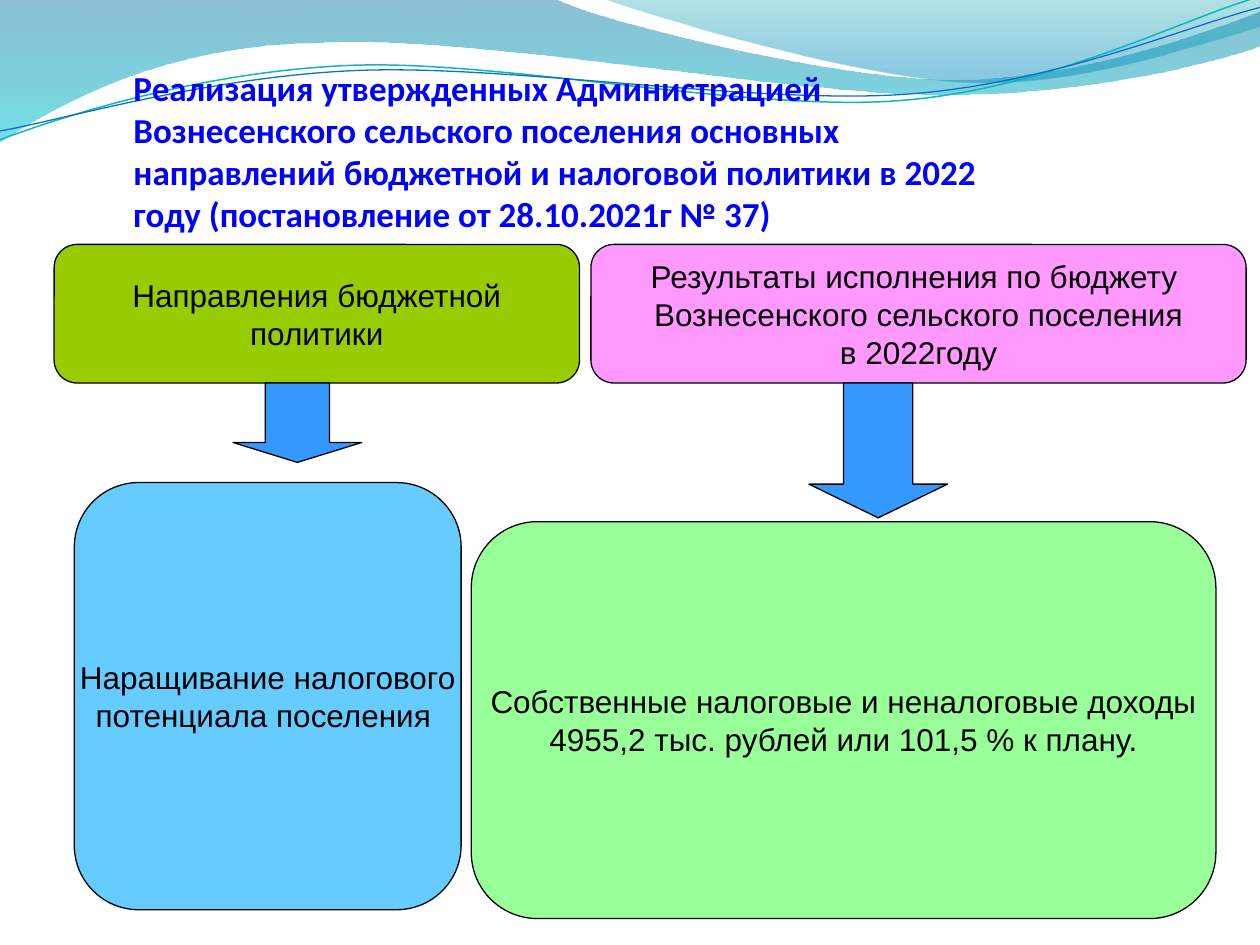
from dataclasses import dataclass
from math import cos, radians, sin

from lxml.etree import SubElement
from pptx import Presentation
from pptx.dml.color import RGBColor
from pptx.enum.shapes import MSO_SHAPE
from pptx.enum.text import MSO_ANCHOR, PP_ALIGN
from pptx.oxml.ns import qn
from pptx.util import Inches, Pt

COLUMNS, ROWS = 10, 7.5
LINE_TILT = -2.7


@dataclass
class Box:
    """A rectangle in grid columns and rows."""

    left: float
    top: float
    width: float
    height: float

    def inner(self, left, top, width, height):
        """Return a box offset from this one's top left corner."""
        return Box(self.left + left, self.top + top, width, height)

    def lengths(self):
        """Return left, top, width and height as slide lengths."""
        return [Inches(value) for value in (self.left, self.top, self.width, self.height)]


def color(hex_string):
    """Turn a hex string into a colour."""
    return RGBColor.from_string(hex_string)


def level_points(points, box, tilt):
    """Turn points back by the tilt around the centre of the box."""
    center_x, center_y = box.left + box.width / 2, box.top + box.height / 2
    cosine, sine = cos(radians(-tilt)), sin(radians(-tilt))
    offsets = [(x - center_x, y - center_y) for x, y in points]
    return [
        (center_x + x * cosine - y * sine, center_y + x * sine + y * cosine)
        for x, y in offsets
    ]


def add_curve(slide, box, numbers, close, tilt=0):
    """Draw a start point followed by straight (two) or cubic (six-number) segments."""
    points = [
        (box.left + segment[index], box.top + segment[index + 1])
        for segment in numbers for index in range(0, len(segment), 2)
    ]
    points = [(Inches(x), Inches(y)) for x, y in level_points(points, box, tilt)]
    builder = slide.shapes.build_freeform(*points[0])
    builder.add_line_segments(points[1:], close=close)
    shape = builder.convert_to_shape()
    shape.shadow.inherit = False
    shape.rotation = tilt
    steps = iter(list(shape.element.spPr.iter(qn("a:lnTo"))))
    for segment in numbers[1:]:
        first = next(steps)
        if len(segment) == 6:
            first.tag = qn("a:cubicBezTo")
            for step in (next(steps), next(steps)):
                first.append(step[0])
                step.getparent().remove(step)
    return shape


def add_wave(slide, box, numbers, stops):
    """Draw a closed wave with a translucent vertical gradient."""
    shape = add_curve(slide, box, numbers, True)
    shape.line.fill.background()
    shape.fill.gradient()
    shape.fill.gradient_angle = 270
    for stop, (position, hex_string, _) in zip(shape.fill.gradient_stops, stops):
        stop.position = position
        stop.color.rgb = color(hex_string)
    tints = shape.element.spPr.iter(qn("a:srgbClr"))
    for tint, (_, _, opacity) in zip(tints, stops):
        SubElement(tint, qn("a:alpha"), val=str(opacity * 1000))


def add_wave_line(slide, box, numbers, hex_string, width):
    """Draw an open, slightly tilted curved line."""
    shape = add_curve(slide, box, numbers, False, LINE_TILT)
    shape.fill.background()
    shape.line.color.rgb = color(hex_string)
    shape.line.width = Pt(width)


def add_header_waves(slide, box):
    """Draw the decorative waves along the top of the slide."""
    add_wave(slide, box, [
        (0, -0.01), (4.4, -0.01), (4.76, 0.17, 6.64, 0.63, 7.58, 0.63),
        (8.53, 0.63, 9.58, 0.26, 10, 0.09), (10.01, 0.36),
        (9.83, 0.44, 8.7, 0.76, 7.46, 0.75), (6.22, 0.75, 3.82, 0.28, 2.57, 0.34),
        (1.29, 0.35, 0.46, 0.83, -0.01, 1.13),
    ], [(0, "0074A1", 45), (1, "00C6CF", 55)])
    add_wave(slide, box, [
        (4.79, -0.01), (5.09, 0.11, 6.82, 0.62, 7.69, 0.65),
        (8.56, 0.69, 9.61, 0.32, 10, 0.21), (10, 0),
    ], [(0, "00A1A9", 30), (0.8, "008BBF", 45)])
    add_wave_line(slide, box, [
        (0, 1.11), (0.48, 0.93, 1.58, 0.57, 2.77, 0.52),
        (3.95, 0.47, 5.93, 0.89, 7.13, 0.8), (8.33, 0.71, 9.38, 0.15, 9.98, -0.02),
    ], "0AB8BF", 0.85)
    add_wave_line(slide, box, [
        (0, 1.04), (0.47, 0.96, 1.64, 0.61, 2.83, 0.56),
        (4.03, 0.51, 5.97, 0.83, 7.17, 0.75), (8.36, 0.67, 9.41, 0.21, 10, 0.06),
    ], "0F6FC6", 0.75)


def add_title(slide, box, text):
    """Write the bold blue title at the bottom of its box."""
    frame = slide.shapes.add_textbox(*box.lengths()).text_frame
    frame.word_wrap = True
    frame.vertical_anchor = MSO_ANCHOR.BOTTOM
    frame.margin_left = frame.margin_right = frame.margin_bottom = 0
    paragraph = frame.paragraphs[0]
    paragraph.text = text
    font = paragraph.font
    font.name, font.size, font.bold = "Calibri", Pt(20), True
    font.color.rgb = color("0000FF")


def add_outlined_shape(slide, box, kind, fill):
    """Add a filled preset shape with a thin black outline."""
    shape = slide.shapes.add_shape(kind, *box.lengths())
    shape.shadow.inherit = False
    shape.fill.solid()
    shape.fill.fore_color.rgb = color(fill)
    shape.line.color.rgb = color("000000")
    shape.line.width = Pt(0.75)
    return shape


def add_card(slide, box, fill, lines):
    """Add a rounded card with one centred paragraph per line."""
    shape = add_outlined_shape(slide, box, MSO_SHAPE.FLOWCHART_ALTERNATE_PROCESS, fill)
    frame = shape.text_frame
    frame.word_wrap = False
    frame.vertical_anchor = MSO_ANCHOR.MIDDLE
    frame.text = "\n".join(lines)
    for paragraph in frame.paragraphs:
        paragraph.alignment = PP_ALIGN.CENTER
        font = paragraph.font
        font.name, font.size = "Arial", Pt(18)
        font.color.rgb = color("000000")


def add_flow(slide, header_box, header, arrow_box, body_box, body):
    """Place a header card, the arrow below it and the body card."""
    add_card(slide, header_box, *header)
    arrow = add_outlined_shape(
        slide, header_box.inner(*arrow_box), MSO_SHAPE.DOWN_ARROW, "3399FF"
    )
    arrow.adjustments[0] = 0.5
    arrow.adjustments[1] = 0.25
    add_card(slide, header_box.inner(*body_box), *body)


def main():
    """Build and save the budget policy slide."""
    presentation = Presentation()
    presentation.slide_width, presentation.slide_height = Inches(COLUMNS), Inches(ROWS)
    slide = presentation.slides.add_slide(presentation.slide_layouts[6])
    add_header_waves(slide, Box(0, 0, COLUMNS, 1.14))
    add_title(
        slide, Box(1.06, 0.21, 7.2, 1.65),
        "Реализация утвержденных Администрацией Вознесенского сельского поселения "
        "основных направлений бюджетной и налоговой политики в 2022 году "
        "(постановление от 28.10.2021г № 37)",
    )
    add_flow(
        slide, Box(0.43, 1.94, 4.17, 1.1),
        ("99CC00", ["Направления бюджетной", "политики"]),
        (1.42, 1.1, 1.02, 0.63),
        (0.16, 1.89, 3.07, 3.39),
        ("66CCFF", ["Наращивание налогового", "потенциала поселения "]),
    )
    add_flow(
        slide, Box(4.69, 1.94, 5.2, 1.1),
        ("FF99FF", ["Результаты исполнения по бюджету ",
                    "Вознесенского сельского поселения", "в 2022году"]),
        (1.73, 1.1, 1.1, 1.07),
        (-0.95, 2.2, 5.91, 3.15),
        ("99FF99", ["Собственные налоговые и неналоговые доходы",
                    "4955,2 тыс. рублей или 101,5 % к плану."]),
    )
    presentation.save("out.pptx")


if __name__ == "__main__":
    main()
